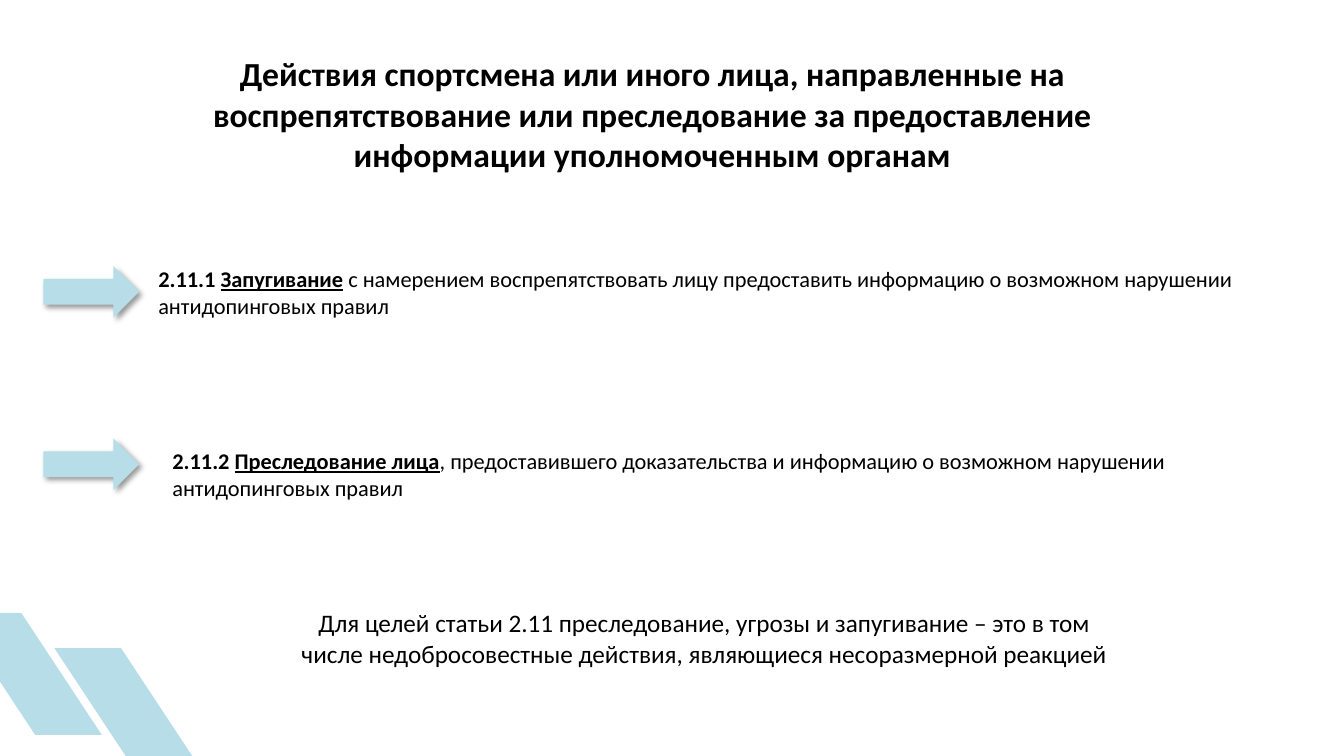
"""Builds a slide on obstructing or persecuting people who report doping violations."""
from lxml import etree
from pptx import Presentation
from pptx import util as u
from pptx.dml.color import RGBColor
from pptx.enum import shapes, text
from pptx.oxml.ns import qn

FONT, BLACK, BLUE = "Calibri", "000000", "B7DEE8"
CENTER, LEFT = text.PP_ALIGN.CENTER, text.PP_ALIGN.LEFT

STRIPES = [(0.54, 6.43), (-0.45, 6.08)]
STRIPE_SIZE = (1.46, 1.21)
ARROW_LEFT, ARROW_TOPS, ARROW_SIZE = 0.43, [2.64, 4.35], (0.95, 0.51)
ARROW_SHADOW = {"blurRad": u.Pt(4), "dist": u.Pt(3), "dir": 45 * 60000}
SHADOW_ALPHA = 40

TITLE = ("Действия спортсмена или иного лица, направленные на воспрепятствование "
         "или преследование за предоставление информации уполномоченным органам")
NOTE = ("Для целей статьи 2.11 преследование, угрозы и запугивание – это в том "
        "числе недобросовестные действия, являющиеся несоразмерной реакцией")
CLAUSES = [
    ((1.52, 2.58), "2.11.1 ", "Запугивание",
     " с намерением воспрепятствовать лицу предоставить информацию "
     "о возможном нарушении антидопинговых правил"),
    ((1.66, 4.39), "2.11.2 ", "Преследование лица",
     ", предоставившего доказательства и информацию "
     "о возможном нарушении антидопинговых правил"),
]
CLAUSE_SIZE = (11.56, 0.64)


def rgb(value):
    return RGBColor.from_string(value)


def inches(values):
    return [u.Inches(v) for v in values]


def add_shape(s, kind, box):
    sp = s.shapes.add_shape(kind, *inches(box))
    sp.fill.solid()
    sp.fill.fore_color.rgb = rgb(BLUE)
    sp.line.fill.background()
    sp.shadow.inherit = False
    return sp


def add_stripe(s, place):
    sp = add_shape(s, shapes.MSO_SHAPE.PARALLELOGRAM, place + STRIPE_SIZE)
    sp.adjustments[0] = 0.66
    sp._element.spPr.find(qn("a:xfrm")).set("flipH", "1")


def add_arrow(s, top):
    sp = add_shape(s, shapes.MSO_SHAPE.RIGHT_ARROW, (ARROW_LEFT, top) + ARROW_SIZE)
    effects = sp._element.spPr.find(qn("a:effectLst"))
    shadow = etree.SubElement(effects, qn("a:outerShdw"), rotWithShape="0")
    for name, value in ARROW_SHADOW.items():
        shadow.set(name, str(int(value)))
    color = etree.SubElement(shadow, qn("a:srgbClr"), val=BLACK)
    etree.SubElement(color, qn("a:alpha"), val=str(SHADOW_ALPHA * 1000))


def add_text(s, box, runs, size, align=LEFT, inset=(0.1, 0.05)):
    tf = s.shapes.add_textbox(*inches(box)).text_frame
    tf.word_wrap = True
    tf.auto_size = text.MSO_AUTO_SIZE.SHAPE_TO_FIT_TEXT
    tf.margin_left = tf.margin_right = u.Inches(inset[0])
    tf.margin_top = tf.margin_bottom = u.Inches(inset[1])
    p = tf.paragraphs[0]
    p.alignment = align
    for words, bold, underline in runs:
        r = p.add_run()
        r.text = words
        r.font.name, r.font.size = FONT, u.Pt(size)
        r.font.bold, r.font.underline = bold, underline
        r.font.color.rgb = rgb(BLACK)


def main():
    prs = Presentation()
    prs.slide_width, prs.slide_height = inches((13.33, 7.5))
    s = prs.slides.add_slide(prs.slide_layouts[6])
    for place in STRIPES:
        add_stripe(s, place)
    for place, number, term, rest in CLAUSES:
        runs = [(number, True, False), (term, True, True), (rest, False, False)]
        add_text(s, place + CLAUSE_SIZE, runs, 16, inset=(0.05, 0.05))
    for top in ARROW_TOPS:
        add_arrow(s, top)
    add_text(s, (1.38, 0.48, 10.18, 1.31), [(TITLE, True, False)], 24, CENTER)
    add_text(s, (2.8, 5.98, 8.37, 0.71), [(NOTE, False, False)], 18, CENTER)
    prs.save("out.pptx")


if __name__ == "__main__":
    main()
